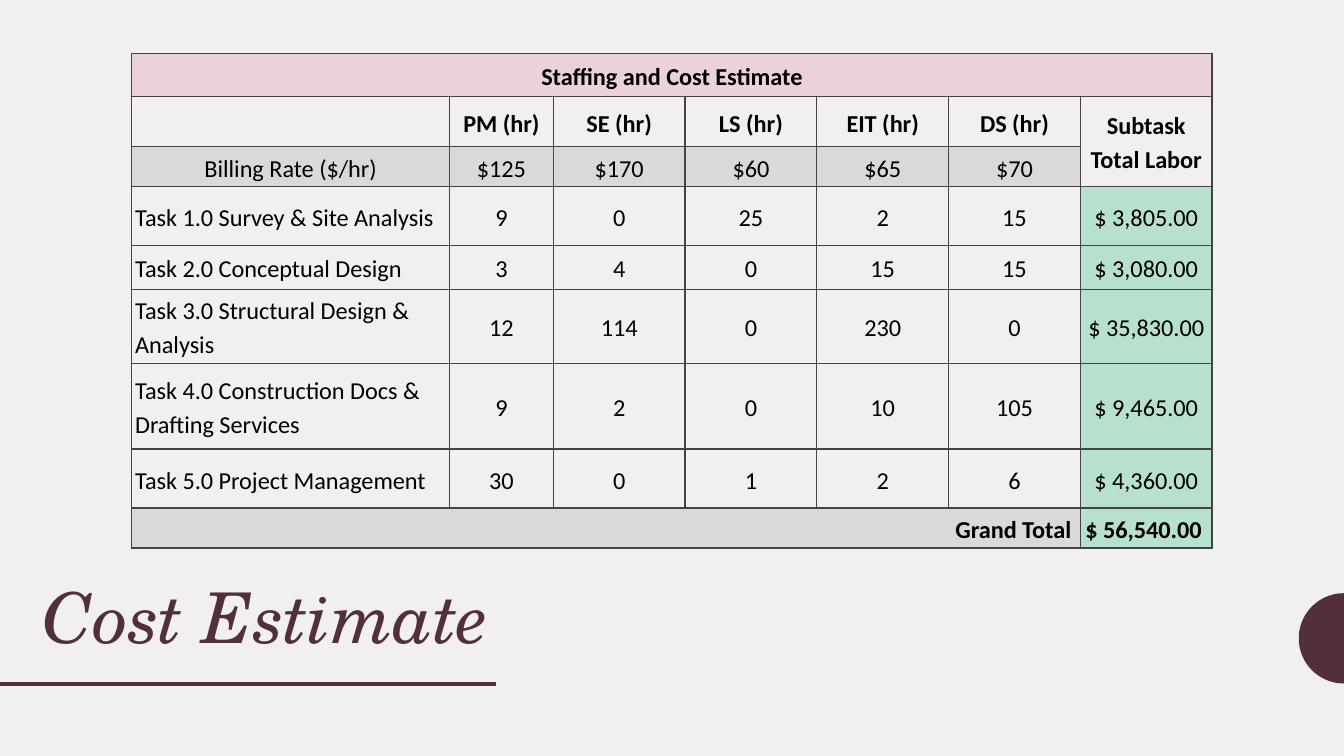
from math import cos, pi, sin
from lxml.etree import SubElement
from pptx import Presentation
from pptx.dml.color import RGBColor
from pptx.enum.shapes import MSO_CONNECTOR
from pptx.enum.text import MSO_ANCHOR, MSO_AUTO_SIZE, PP_ALIGN
from pptx.oxml.ns import qn
from pptx.util import Pt

HUES = {"page": "F2F0EF", "plum": "51303B", "ink": "000000", "edge": "434343",
        "pink": "EAD1DC", "gray": "D9D9D9", "mint": "B7E1CD"}
SANS, SERIF = "Calibri", "TeX Gyre Schola"
LEFT, MID, RIGHT = PP_ALIGN.LEFT, PP_ALIGN.CENTER, PP_ALIGN.RIGHT

WIDTHS = [170.4, 55.6] + [70.6] * 5
HEIGHTS = [23, 27, 21.2, 31.6, 23.6, 39.6, 46, 31.6, 21.4]
ROWS = [
    ["Staffing and Cost Estimate"] + [""] * 6,
    ["", "PM (hr)", "SE (hr)", "LS (hr)", "EIT (hr)", "DS (hr)",
     "Subtask Total Labor"],
    ["Billing Rate ($/hr)", "$125", "$170", "$60", "$65", "$70", ""],
    ["Task 1.0 Survey & Site Analysis", "9", "0", "25", "2", "15",
     "$ 3,805.00"],
    ["Task 2.0 Conceptual Design", "3", "4", "0", "15", "15", "$ 3,080.00"],
    ["Task 3.0 Structural Design & Analysis", "12", "114", "0", "230", "0",
     "$ 35,830.00"],
    ["Task 4.0 Construction Docs & Drafting Services", "9", "2", "0", "10",
     "105", "$ 9,465.00"],
    ["Task 5.0 Project Management", "30", "0", "1", "2", "6", "$ 4,360.00"],
    ["Grand Total "] + [""] * 5 + ["$ 56,540.00 "],
]
LAST = len(ROWS) - 1
MERGES = [((0, 0), (0, 6)), ((1, 6), (2, 6)), ((LAST, 0), (LAST, 5))]


def shade(row, col):
    """Name the fill of a table cell, or None for a clear one."""
    if row == 0:
        return "pink"
    if row > 2 and col == 6:
        return "mint"
    return "gray" if row in (2, LAST) else None


def side(row, col):
    """Choose the alignment of a table cell."""
    if col or row < 3:
        return MID
    return RIGHT if row == LAST else LEFT


class Deck:
    def __init__(self, wide, high):
        self.show = Presentation()
        self.show.slide_width, self.show.slide_height = Pt(wide), Pt(high)
        self.slide = self.show.slides.add_slide(self.show.slide_layouts[5])
        self.shapes = self.slide.shapes
        self.paint(self.slide.background.fill, "page")

    def paint(self, fill, hue):
        fill.solid()
        fill.fore_color.rgb = RGBColor.from_string(HUES[hue])

    def add_text(self, para, text, size, face, hue, bold=False, italic=False):
        run = para.add_run()
        run.text = text
        font = run.font
        font.size, font.name, font.bold, font.italic = Pt(size), face, bold, italic
        font.color.rgb = RGBColor.from_string(HUES[hue])

    def title(self, text, x, y, w, h):
        box = self.shapes.title
        box.left, box.top, box.width, box.height = Pt(x), Pt(y), Pt(w), Pt(h)
        frame = box.text_frame
        frame.word_wrap = True
        frame.auto_size = MSO_AUTO_SIZE.NONE
        frame.vertical_anchor = MSO_ANCHOR.BOTTOM
        frame.margin_left = frame.margin_right = Pt(7.2)
        frame.margin_top = frame.margin_bottom = Pt(7.2)
        para = frame.paragraphs[0]
        para.alignment, para.line_spacing = LEFT, 0.9
        self.add_text(para, text, 37.5, SERIF, "plum", italic=True)

    def rule(self, x, y, end):
        line = self.shapes.add_connector(
            MSO_CONNECTOR.STRAIGHT, Pt(x), Pt(y), Pt(end), Pt(y))
        line.line.width = Pt(2)
        line.line.color.rgb = RGBColor.from_string(HUES["plum"])
        SubElement(line._element.spPr, qn("a:effectLst"))

    def dome(self, x, y, r, steps=36):
        """Draw the left half of a disk centred on x, y."""
        turns = [pi / 2 + pi * i / steps for i in range(steps + 1)]
        dots = [(Pt(x + r * cos(t)), Pt(y + r * sin(t))) for t in turns]
        pen = self.shapes.build_freeform(*dots[0])
        pen.add_line_segments(dots[1:], close=True)
        shape = pen.convert_to_shape()
        shape.shadow.inherit = False
        self.paint(shape.fill, "plum")
        shape.line.fill.background()

    def frame(self, cell):
        """Give a cell thin borders; call before its fill is set."""
        props = cell._tc.get_or_add_tcPr()
        for edge in ("a:lnL", "a:lnR", "a:lnT", "a:lnB"):
            line = SubElement(props, qn(edge), w=str(Pt(0.75)))
            fill = SubElement(line, qn("a:solidFill"))
            SubElement(fill, qn("a:srgbClr"), val=HUES["edge"])

    def cell(self, cell, text, hue, align, bold):
        self.frame(cell)
        if hue:
            self.paint(cell.fill, hue)
        else:
            cell.fill.background()
        cell.vertical_anchor = MSO_ANCHOR.MIDDLE
        cell.margin_left = cell.margin_right = Pt(2)
        cell.margin_top = cell.margin_bottom = Pt(1.4)
        if text:
            para = cell.text_frame.paragraphs[0]
            para.alignment, para.line_spacing = align, 1.15
            self.add_text(para, text, 13, SANS, "ink", bold)

    def table(self, x, y):
        grid = self.shapes.add_table(
            len(ROWS), len(WIDTHS), Pt(x), Pt(y),
            Pt(sum(WIDTHS)), Pt(sum(HEIGHTS))).table
        grid.first_row = grid.horz_banding = False
        for col, width in zip(grid.columns, WIDTHS):
            col.width = Pt(width)
        for row, height in zip(grid.rows, HEIGHTS):
            row.height = Pt(height)
        for r, row in enumerate(ROWS):
            for c, text in enumerate(row):
                self.cell(grid.cell(r, c), text, shade(r, c), side(r, c),
                          r in (0, 1, LAST))
        for start, end in MERGES:
            grid.cell(*start).merge(grid.cell(*end))


def main():
    deck = Deck(720, 405)
    deck.dome(720, 342, 24.2)
    deck.rule(0, 366.3, 265.7)
    deck.title("Cost Estimate", 15.8, 306.7, 282.2, 53.3)
    deck.table(70.4, 28.7)
    deck.show.save("out.pptx")


if __name__ == "__main__":
    main()
